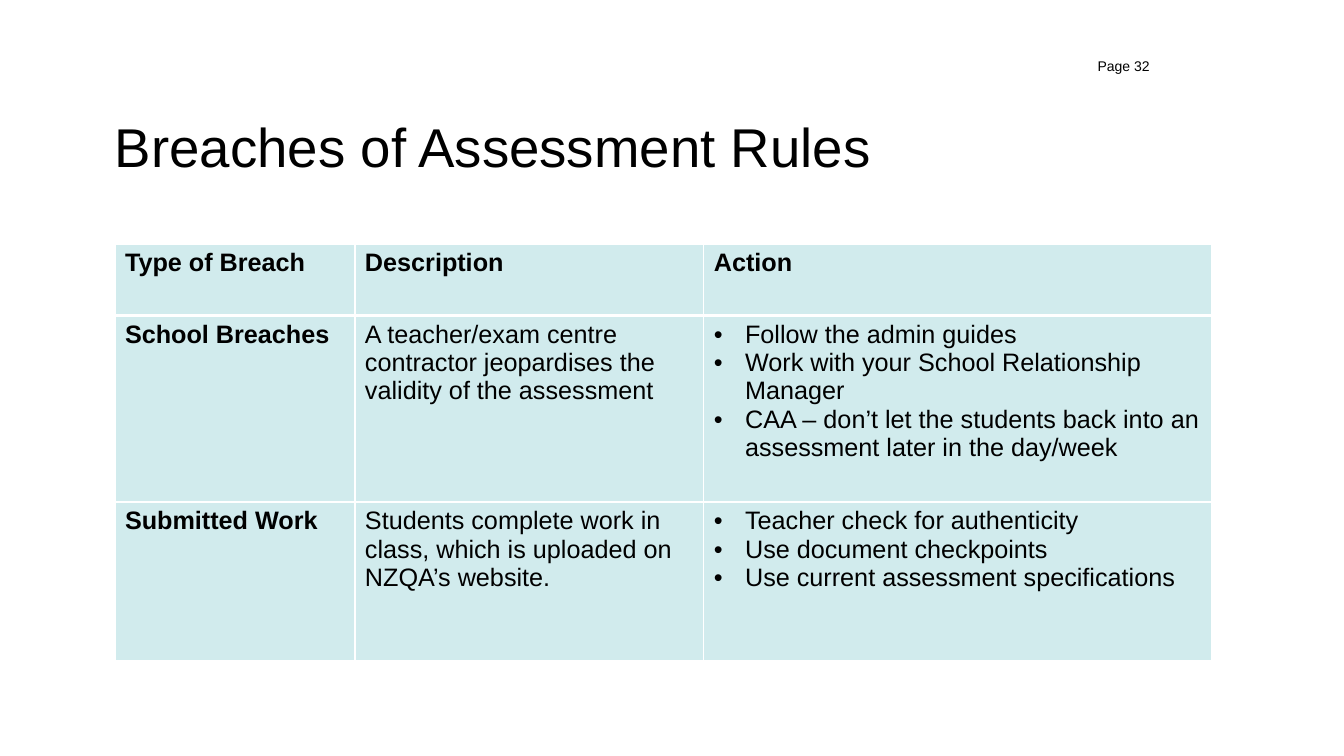
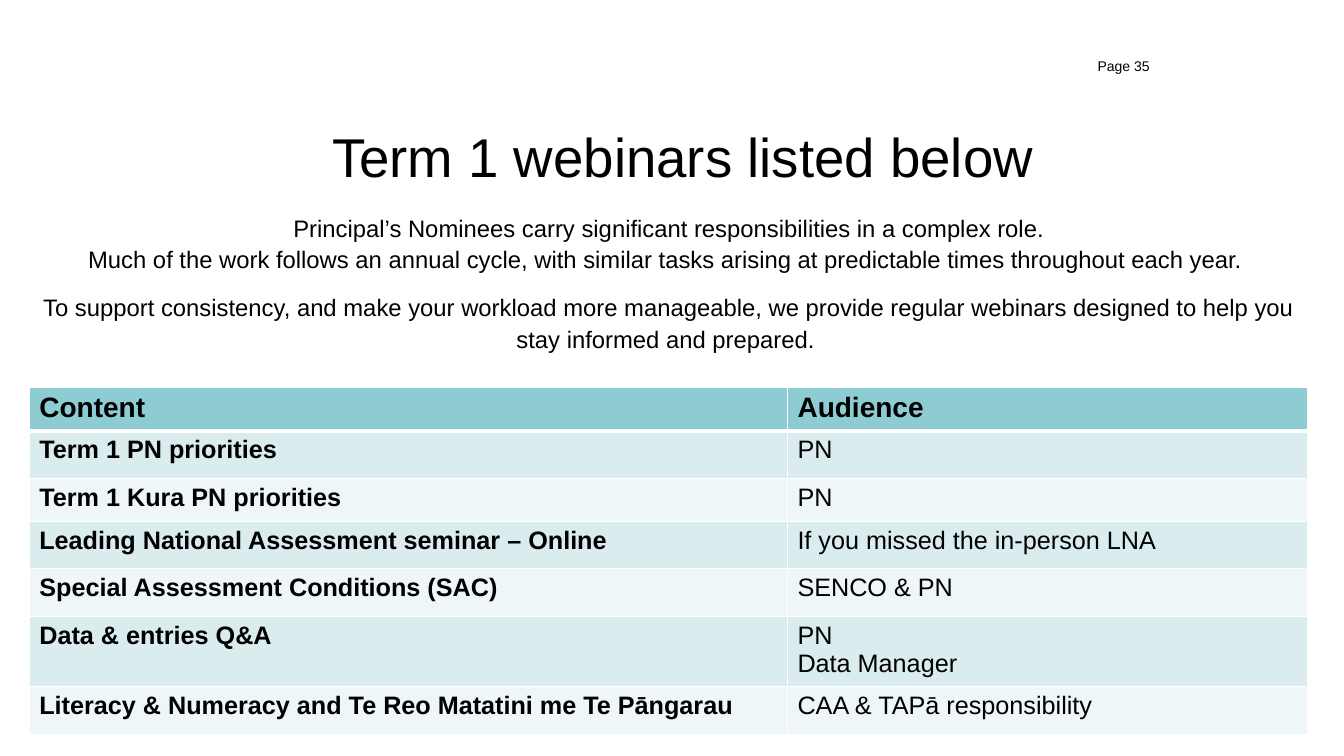
"""Build two slides on assessment breaches and Term 1 webinars."""
from lxml import etree
from pptx import Presentation
from pptx import util as u
from pptx.dml.color import RGBColor
from pptx.enum import text
from pptx.oxml.ns import qn

PX = 9144
FONT = "Arial"
BLACK = RGBColor(0x00, 0x00, 0x00)
WHITE = RGBColor(0xFF, 0xFF, 0xFF)
PALE_TEAL = RGBColor(0xD1, 0xEB, 0xED)
HEADER_TEAL = RGBColor(0x8D, 0xCC, 0xD2)
BAND_DARK = RGBColor(0xDB, 0xEC, 0xEE)
BAND_LIGHT = RGBColor(0xEE, 0xF6, 0xF7)
LEFT, CENTER, RIGHT = text.PP_ALIGN.LEFT, text.PP_ALIGN.CENTER, text.PP_ALIGN.RIGHT

BREACHES = {
    "place": (114, 242),
    "columns": (238, 346, 504),
    "heights": (71, 185, 157),
    "header_size": 18,
    "header_fill": PALE_TEAL,
    "bands": (PALE_TEAL,),
    "bullet_column": 2,
    "rows": [
        ("Type of Breach", "Description", "Action"),
        ("School Breaches",
         "A teacher/exam centre contractor jeopardises the validity of the assessment",
         ["Follow the admin guides",
          "Work with your School Relationship Manager",
          "CAA – don’t let the students back into an assessment later in the day/week"]),
        ("Submitted Work",
         "Students complete work in class, which is uploaded on NZQA’s website.",
         ["Teacher check for authenticity",
          "Use document checkpoints",
          "Use current assessment specifications"]),
    ],
}
WEBINARS = {
    "place": (29, 384),
    "columns": (752, 516),
    "heights": (43, 47, 43, 47, 47, 64, 47),
    "header_size": 20,
    "header_fill": HEADER_TEAL,
    "bands": (BAND_DARK, BAND_LIGHT),
    "bullet_column": None,
    "rows": [
        ("Content", "Audience"),
        ("Term 1 PN priorities", "PN"),
        ("Term 1 Kura PN priorities", "PN"),
        ("Leading National Assessment seminar – Online", "If you missed the in-person LNA"),
        ("Special Assessment Conditions (SAC)", "SENCO & PN"),
        ("Data & entries Q&A", ["PN", "Data Manager"]),
        ("Literacy & Numeracy and Te Reo Matatini me Te Pāngarau", "CAA & TAPā responsibility"),
    ],
}
INTRO = [
    "Principal’s Nominees carry significant responsibilities in a complex role.\v"
    "Much of the work follows an annual cycle, with similar tasks arising at "
    "predictable times throughout each year. ",
    "To support consistency, and make your workload more manageable, we provide "
    "regular webinars designed to help you stay informed and prepared. ",
]
SLIDES = [
    {"title": "Breaches of Assessment Rules", "title_place": (114, 119), "align": LEFT,
     "page": "Page 32", "table": BREACHES, "intro": []},
    {"title": "Term 1 webinars listed below", "title_place": (113, 129), "align": CENTER,
     "page": "Page 35", "table": WEBINARS, "intro": INTRO},
]


def px(*lengths):
    return [u.Emu(length * PX) for length in lengths]


def add_bullet(para):
    props = para._p.get_or_add_pPr()
    props.set("marL", str(31 * PX))
    props.set("indent", str(-31 * PX))
    etree.SubElement(props, qn("a:buFont")).set("typeface", FONT)
    etree.SubElement(props, qn("a:buChar")).set("char", "•")


def write(frame, lines, size, bold=False, align=LEFT, spacing=None, gap=0, bulleted=False):
    for index, line in enumerate(lines):
        para = frame.add_paragraph() if index else frame.paragraphs[0]
        para.text = line
        if bulleted:
            add_bullet(para)
        para.alignment = align
        if spacing:
            para.line_spacing = spacing
        if index and gap:
            para.space_before = u.Pt(gap)
        font = para.font
        font.name, font.size, font.bold = FONT, u.Pt(size), bold
        font.color.rgb = BLACK


def add_text(page, place, lines, size, margin=0, anchor=text.MSO_ANCHOR.TOP, **style):
    frame = page.shapes.add_textbox(*px(*place)).text_frame
    frame.word_wrap = True
    frame.vertical_anchor = anchor
    frame.margin_left = frame.margin_right = u.Emu(margin * PX)
    frame.margin_top = frame.margin_bottom = 0
    write(frame, lines, size, **style)


def set_borders(cell, top, bottom):
    props = cell._tc.get_or_add_tcPr()
    widths = {"a:lnL": 1, "a:lnR": 1, "a:lnT": top, "a:lnB": bottom}
    for index, (tag, width) in enumerate(widths.items()):
        line = etree.Element(qn(tag), w=str(u.Pt(width)))
        fill = etree.SubElement(line, qn("a:solidFill"))
        etree.SubElement(fill, qn("a:srgbClr")).set("val", str(WHITE))
        props.insert(index, line)


def add_table(page, data):
    rows, columns, heights = data["rows"], data["columns"], data["heights"]
    place = px(*data["place"], sum(columns), sum(heights))
    table = page.shapes.add_table(len(rows), len(columns), *place).table
    table.first_row = table.horz_banding = False
    for column, width in zip(table.columns, px(*columns)):
        column.width = width
    for row, height in zip(table.rows, px(*heights)):
        row.height = height
    for r, row in enumerate(rows):
        for c, content in enumerate(row):
            cell = table.cell(r, c)
            bands = data["bands"]
            cell.fill.solid()
            cell.fill.fore_color.rgb = bands[(r - 1) % len(bands)] if r else data["header_fill"]
            set_borders(cell, top=3 if r == 1 else 1, bottom=1 if r else 3)
            lines = content if isinstance(content, list) else [content]
            write(cell.text_frame, lines, 18 if r else data["header_size"],
                  bold=r == 0 or c == 0, bulleted=r > 0 and c == data["bullet_column"])


def add_slide(deck, content):
    page = deck.slides.add_slide(deck.slide_layouts[6])
    page.background.fill.solid()
    page.background.fill.fore_color.rgb = WHITE
    add_text(page, (*content["title_place"], 1128, 81), [content["title"]], 39,
             align=content["align"], spacing=0.9)
    add_text(page, (850, 53, 300, 24), [content["page"]], 10, margin=10,
             anchor=text.MSO_ANCHOR.MIDDLE, align=RIGHT)
    add_table(page, content["table"])
    if content["intro"]:
        add_text(page, (34, 209, 1259, 157), content["intro"], 17,
                 align=CENTER, spacing=1.1, gap=12)


def main():
    deck = Presentation()
    deck.slide_width, deck.slide_height = px(1333, 750)
    for content in SLIDES:
        add_slide(deck, content)
    deck.save("out.pptx")


if __name__ == "__main__":
    main()
